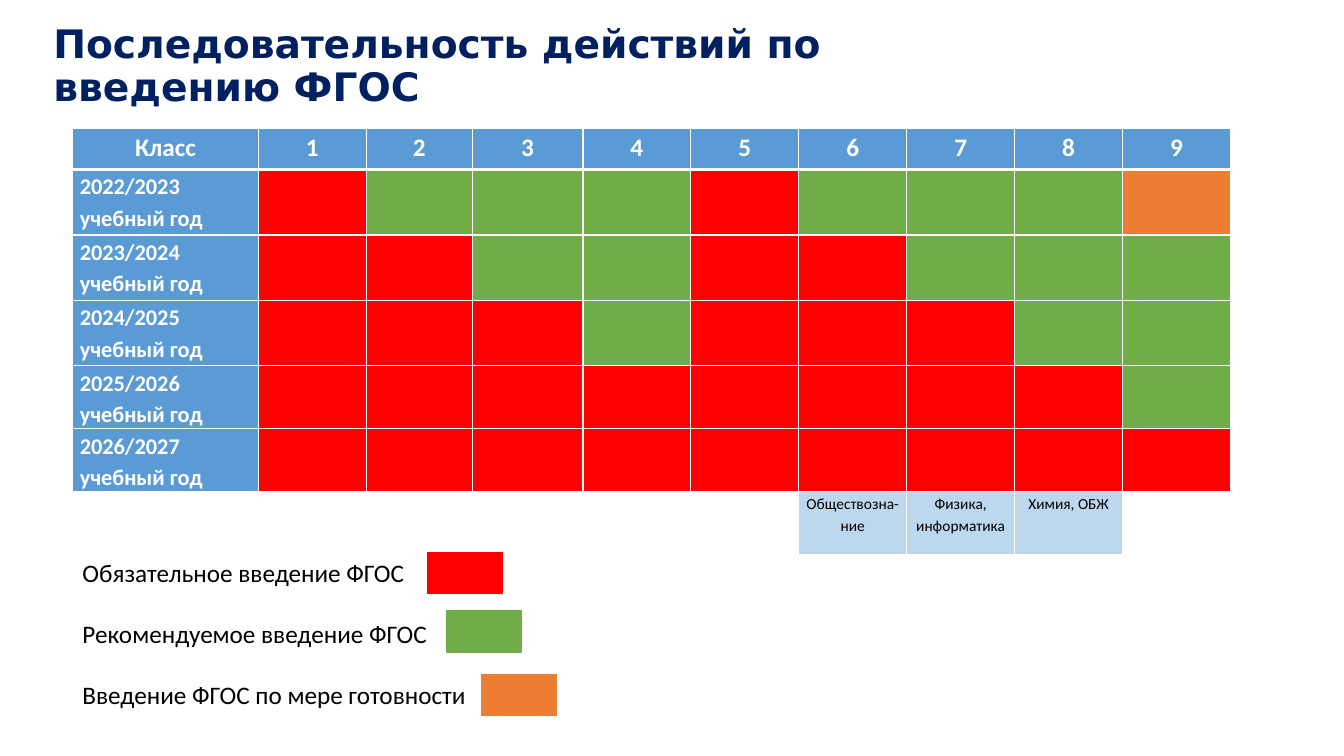
"""Build the slide with the yearly schedule of introducing the school standard."""
import pptx
import pptx.dml.color
import pptx.enum.shapes
import pptx.enum.text
import pptx.oxml
import pptx.oxml.ns
import pptx.util

Cm = pptx.util.Cm
Pt = pptx.util.Pt
ALIGN = pptx.enum.text.PP_ALIGN
ANCHOR = pptx.enum.text.MSO_ANCHOR

COLOURS = {
    "title": "002060",
    "header": "5B9BD5",
    "required": "FF0000",
    "advised": "70AD47",
    "when_ready": "ED7D31",
    "subject": "BDD7EE",
    "white": "FFFFFF",
    "black": "000000",
}
GRADES = range(1, 10)
FIRST_YEAR = 2022
COLUMN_WIDTHS = [4.68, 2.72, 2.67, 2.79] + [2.72] * 6
ROW_HEIGHTS = [1.04] + [1.65] * 3 + [1.58] * 3
SUBJECTS = {6: "Обществозна-ние", 7: "Физика, информатика", 8: "Химия, ОБЖ"}
LEGEND = [
    ("Обязательное введение ФГОС", "required", 10.77, 13.92),
    ("Рекомендуемое введение ФГОС", "advised", 11.25, 15.39),
    ("Введение ФГОС по мере готовности", "when_ready", 12.14, 16.99),
]
CELL_FORMAT = {
    "margin_left": Cm(0.18),
    "margin_right": Cm(0.18),
    "margin_top": 0,
    "margin_bottom": 0,
}


def rgb(name):
    return pptx.dml.color.RGBColor.from_string(COLOURS[name])


def apply_format(target, values):
    for name, value in values.items():
        setattr(target, name, value)


def write(para, text, size, colour, bold=False, font="Calibri", **layout):
    span = para.add_run()
    span.text = text
    apply_format(span.font, {"name": font, "size": Pt(size), "bold": bold})
    span.font.color.rgb = rgb(colour)
    apply_format(para, layout)


def place(box, left, top, width, height):
    position = {"left": left, "top": top, "width": width, "height": height}
    apply_format(box, {name: Cm(value) for name, value in position.items()})


def add_title(page):
    box = page.shapes.title
    place(box, 1.09, 1.02, 25.65, 1.35)
    frame = box.text_frame
    apply_format(frame, {
        "word_wrap": True,
        "auto_size": pptx.enum.text.MSO_AUTO_SIZE.NONE,
        "vertical_anchor": ANCHOR.MIDDLE,
    })
    write(frame.paragraphs[0], "Последовательность действий по введению ФГОС",
          28, "title", True, "DejaVu Sans", alignment=ALIGN.LEFT, line_spacing=0.9)


def set_borders(cell, top=1, bottom=1):
    properties = cell._tc.get_or_add_tcPr()
    for side, width in {"L": 1, "R": 1, "T": top, "B": bottom}.items():
        properties.append(pptx.oxml.parse_xml(
            f'<a:ln{side} {pptx.oxml.ns.nsdecls("a")} w="{Pt(width)}"><a:solidFill>'
            f'<a:srgbClr val="{COLOURS["white"]}"/></a:solidFill></a:ln{side}>'))


def fill_cell(cell, colour, text="", size=18, text_colour="white", bold=True,
              alignment=ALIGN.CENTER):
    apply_format(cell, CELL_FORMAT)
    if colour:
        cell.fill.solid()
        cell.fill.fore_color.rgb = rgb(colour)
    else:
        cell.fill.background()
    if text:
        write(cell.text_frame.paragraphs[0], text, size, text_colour, bold,
              alignment=alignment, line_spacing=1.15)


def stage(grade, year):
    """Return the colour name for a grade in the given year of the rollout."""
    position = grade - 1 if grade < 5 else grade - 5
    lag = position - year
    if lag < 0:
        return "required"
    return "when_ready" if lag == 3 else "advised"


def add_schedule(page):
    table = page.shapes.add_table(
        len(ROW_HEIGHTS), len(COLUMN_WIDTHS), Cm(1.83), Cm(3.23),
        Cm(sum(COLUMN_WIDTHS)), Cm(sum(ROW_HEIGHTS))).table
    table.horz_banding = False
    for column, width in zip(table.columns, COLUMN_WIDTHS):
        column.width = Cm(width)
    for index, height in enumerate(ROW_HEIGHTS):
        table.rows[index].height = Cm(height)
        for cell in table.rows[index].cells:
            set_borders(cell, 3 if index == 1 else 1, 3 if index == 0 else 1)

    for column, heading in enumerate(["Класс", *map(str, GRADES)]):
        fill_cell(table.cell(0, column), "header", heading)
    for year in range(1, 6):
        start = FIRST_YEAR + year - 1
        fill_cell(table.cell(year, 0), "header", f"{start}/{start + 1} учебный год",
                  16, alignment=ALIGN.LEFT)
        for grade in GRADES:
            fill_cell(table.cell(year, grade), stage(grade, year))
    for column in range(len(COLUMN_WIDTHS)):
        cell = table.cell(6, column)
        if column in SUBJECTS:
            fill_cell(cell, "subject", SUBJECTS[column], 11, "black", False)
        else:
            fill_cell(cell, "white" if column < 5 else None)


def add_swatch(page, colour, left, top):
    swatch = page.shapes.add_shape(pptx.enum.shapes.MSO_SHAPE.RECTANGLE,
                                   Cm(left), Cm(top), Cm(1.88), Cm(1.04))
    swatch.shadow.inherit = False
    swatch.fill.solid()
    swatch.fill.fore_color.rgb = rgb(colour)
    swatch.line.color.rgb = rgb(colour)
    swatch.line.width = Pt(1)


def add_legend(page):
    box = page.shapes.add_textbox(Cm(1.83), Cm(13.92), Cm(16.94), Cm(4.11))
    frame = box.text_frame
    frame.word_wrap = True
    for index, (label, colour, left, top) in enumerate(LEGEND):
        para = frame.add_paragraph() if index else frame.paragraphs[0]
        write(para, label, 18, "black", space_before=Pt(22 if index else 0))
        add_swatch(page, colour, left, top)


def main():
    deck = pptx.Presentation()
    apply_format(deck, {"slide_width": Cm(33.87), "slide_height": Cm(19.05)})
    page = deck.slides.add_slide(deck.slide_layouts.get_by_name("Title Only"))
    add_title(page)
    add_schedule(page)
    add_legend(page)
    deck.save("out.pptx")


if __name__ == "__main__":
    main()
